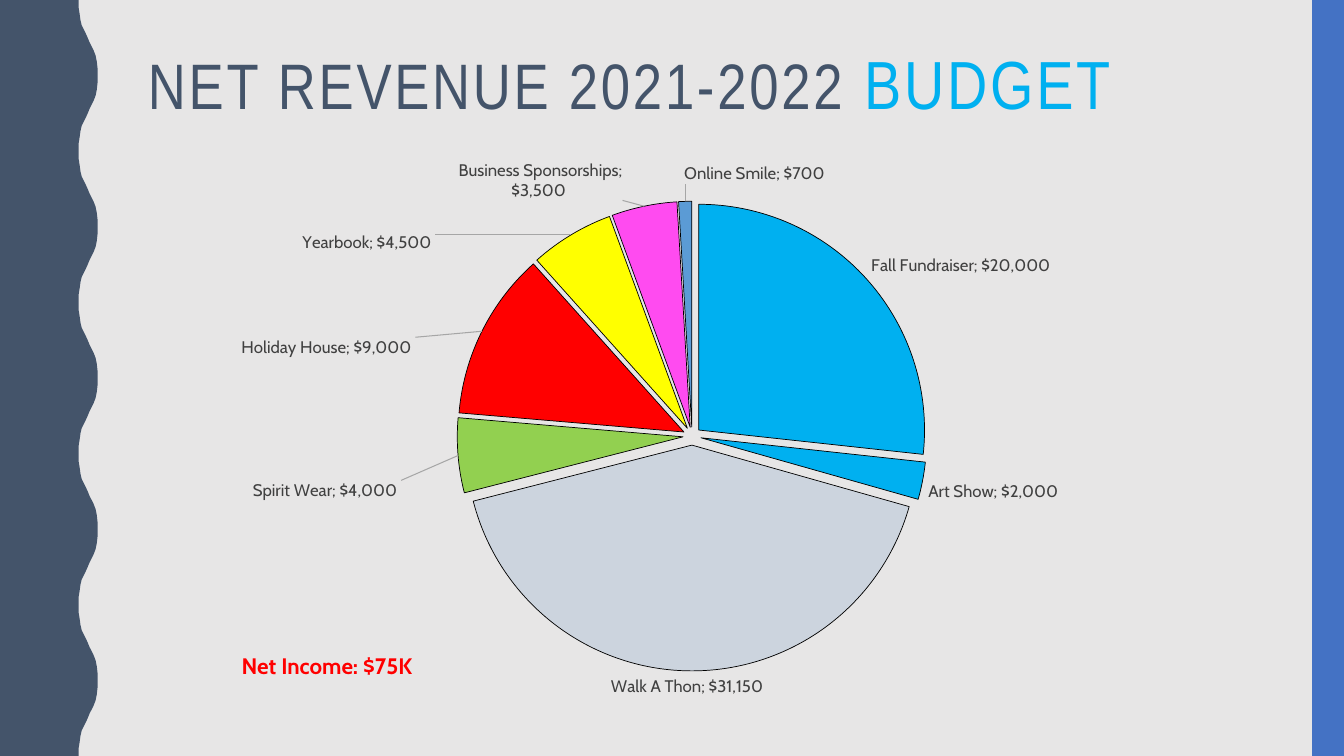
from copy import deepcopy

from lxml import etree
from pptx import Presentation
from pptx.chart.data import CategoryChartData
from pptx.dml.color import RGBColor
from pptx.enum.chart import XL_CHART_TYPE, XL_LABEL_POSITION
from pptx.enum.shapes import MSO_SHAPE
from pptx.enum.text import MSO_ANCHOR, PP_ALIGN
from pptx.oxml import parse_xml
from pptx.oxml.ns import nsdecls, qn
from pptx.util import Cm, Pt

PIE = XL_CHART_TYPE.PIE
OUTSIDE_END = XL_LABEL_POSITION.OUTSIDE_END
RECTANGLE = MSO_SHAPE.RECTANGLE
MIDDLE, TOP = MSO_ANCHOR.MIDDLE, MSO_ANCHOR.TOP
LEFT, CENTER = PP_ALIGN.LEFT, PP_ALIGN.CENTER

SLIDE_WIDTH, SLIDE_HEIGHT = 33.87, 19.05
TITLE_FONT, BODY_FONT = "Arial Narrow", "Cabin"
NAVY, SKY, RED = "44546A", "00B0F0", "FF0000"

# Revenue source, dollars, slice colour, label shift as a share of the chart
REVENUE = [
    ("Fall Fundraiser", 20000, SKY, None),
    ("Art Show", 2000, SKY, None),
    ("Walk A Thon", 31150, "CCD4DE", None),
    ("Spirit Wear", 4000, "92D050", (-0.05, 0.06)),
    ("Holiday House", 9000, RED, (-0.06, 0.05)),
    ("Yearbook", 4500, "FFFF00", (-0.13, 0.04)),
    ("Business Sponsorships", 3500, "FF4BF0", (-0.02, 0)),
    ("Online Smile", 700, "5B9BD5", (0.07, -0.02)),
]

# Half a wave of the left edge, from trough to crest: x, y in cm
WAVE_PERIOD = 3.81
HALF_WAVE = [
    (1.98, 0), (1.98, 0.18), (2.01, 0.36), (2.03, 0.51), (2.06, 0.64),
    (2.11, 0.74), (2.16, 0.84), (2.21, 0.95), (2.26, 1.07), (2.31, 1.17),
    (2.36, 1.27), (2.41, 1.4), (2.44, 1.55), (2.46, 1.73), (2.46, 1.91),
]


def rgb(color):
    return RGBColor.from_string(color)


def fill_plain(shape, color):
    shape.shadow.inherit = False
    shape.fill.solid()
    shape.fill.fore_color.rgb = rgb(color)
    shape.line.fill.background()


def add_wavy_band(slide, height, color):
    wave = HALF_WAVE + [(x, WAVE_PERIOD - y) for x, y in HALF_WAVE[-2::-1]]
    edge = [(x, y + WAVE_PERIOD * turn)
            for turn in range(round(height / WAVE_PERIOD)) for x, y in wave]
    builder = slide.shapes.build_freeform(0, 0)
    builder.add_line_segments(
        [(Cm(x), Cm(y)) for x, y in edge + [(0, height)]], close=True)
    fill_plain(builder.convert_to_shape(), color)


def add_side_bar(slide, box, color):
    fill_plain(slide.shapes.add_shape(RECTANGLE, *map(Cm, box)), color)


def add_paragraph_box(slide, box, anchor, align):
    """Add a wrapping text box and return its only paragraph."""
    frame = slide.shapes.add_textbox(*map(Cm, box)).text_frame
    frame.word_wrap = True
    frame.vertical_anchor = anchor
    paragraph = frame.paragraphs[0]
    paragraph.alignment = align
    return paragraph


def add_title(slide, box):
    title = add_paragraph_box(slide, box, MIDDLE, LEFT)
    title.line_spacing = 0.9
    title.font.name = TITLE_FONT
    for words, size, color in (("NET REVENUE 2021-2022 ", 45.9, NAVY),
                               ("BUDGET", 48.6, SKY)):
        run = title.add_run()
        run.text = words
        run.font.size = Pt(size)
        run.font.color.rgb = rgb(color)
        run.font._element.set("spc", "200")


def add_net_income(slide, box):
    net_income = add_paragraph_box(slide, box, TOP, CENTER)
    net_income.text = "Net Income: $75K"
    font = net_income.font
    font.name, font.size, font.bold = BODY_FONT, Pt(16), True
    font.color.rgb = rgb(RED)


def manual_layout(settings):
    entries = "".join(f'<c:{tag} val="{value}"/>' for tag, value in settings.items())
    return parse_xml(f'<c:layout {nsdecls("c")}><c:manualLayout>{entries}'
                     '</c:manualLayout></c:layout>')


def place_plot(chart, x, y, w, h):
    plot_area = chart.element.find(".//" + qn("c:plotArea"))
    for layout in plot_area.findall(qn("c:layout")):
        plot_area.remove(layout)
    plot_area.insert(0, manual_layout(dict(
        layoutTarget="inner", xMode="edge", yMode="edge", x=x, y=y, w=w, h=h)))


def style_slices(chart, series):
    for index, (_, _, color, _) in enumerate(REVENUE):
        slice_format = series.points[index].format
        slice_format.fill.solid()
        slice_format.fill.fore_color.rgb = rgb(color)
        slice_format.line.color.rgb = rgb("000000")
        slice_format.line.width = Pt(0.5)
    explosion = parse_xml(f'<c:explosion {nsdecls("c")} val="4"/>')
    chart.element.find(".//" + qn("c:dPt")).addprevious(explosion)


def label_slices(chart, series):
    labels = series.data_labels
    labels.show_value = labels.show_category_name = True
    labels.number_format = '"$"#,##0_);[Red]\\("$"#,##0\\)'
    labels.number_format_is_linked = False
    labels.position = OUTSIDE_END
    labels.font.name, labels.font.size = BODY_FONT, Pt(12)
    labels.font.color.rgb = rgb("404040")

    shared = chart.element.find(".//" + qn("c:ser")).find(qn("c:dLbls"))
    for leader in shared.findall(qn("c:showLeaderLines")):
        shared.remove(leader)
    etree.SubElement(shared, qn("c:separator")).text = "; "
    settings = list(shared)
    shifted = [(i, row[3]) for i, row in enumerate(REVENUE) if row[3]]
    for position, (index, (x, y)) in enumerate(shifted):
        label = parse_xml(f'<c:dLbl {nsdecls("c")}><c:idx val="{index}"/></c:dLbl>')
        label.append(manual_layout(dict(x=x, y=y)))
        label.extend([deepcopy(setting) for setting in settings])
        shared.insert(position, label)
    etree.SubElement(shared, qn("c:showLeaderLines")).set("val", "1")
    shared.append(parse_xml(
        f'<c:leaderLines {nsdecls("c", "a")}><c:spPr><a:ln w="9525"><a:solidFill>'
        '<a:srgbClr val="A6A6A6"/></a:solidFill></a:ln></c:spPr></c:leaderLines>'))


def add_revenue_pie(slide, box):
    data = CategoryChartData()
    data.categories = [source for source, *_ in REVENUE]
    data.add_series("Series 1", [dollars for _, dollars, *_ in REVENUE])
    chart = slide.shapes.add_chart(PIE, *map(Cm, box), data).chart
    chart.has_title = chart.has_legend = False
    chart.font.name, chart.font.size = BODY_FONT, Pt(10)
    chart.font.color.rgb = rgb("000000")
    plot = chart.plots[0]
    plot.vary_by_categories = True
    place_plot(chart, 0.28, 0.1, 0.46, 0.83)
    style_slices(chart, plot.series[0])
    label_slices(chart, plot.series[0])


def main():
    deck = Presentation()
    deck.slide_width, deck.slide_height = Cm(SLIDE_WIDTH), Cm(SLIDE_HEIGHT)
    slide = deck.slides.add_slide(deck.slide_layouts[6])
    slide.background.fill.solid()
    slide.background.fill.fore_color.rgb = rgb("E7E6E6")
    add_wavy_band(slide, SLIDE_HEIGHT, NAVY)
    add_side_bar(slide, (SLIDE_WIDTH - 0.8, 0, 0.8, SLIDE_HEIGHT), "4472C4")
    add_title(slide, (3.48, 1.07, 28.27, 2.29))
    add_revenue_pie(slide, (4.32, 3.56, 25.73, 14.43))
    add_net_income(slide, (4.72, 16.31, 7.04, 1.68))
    deck.save("out.pptx")


if __name__ == "__main__":
    main()
